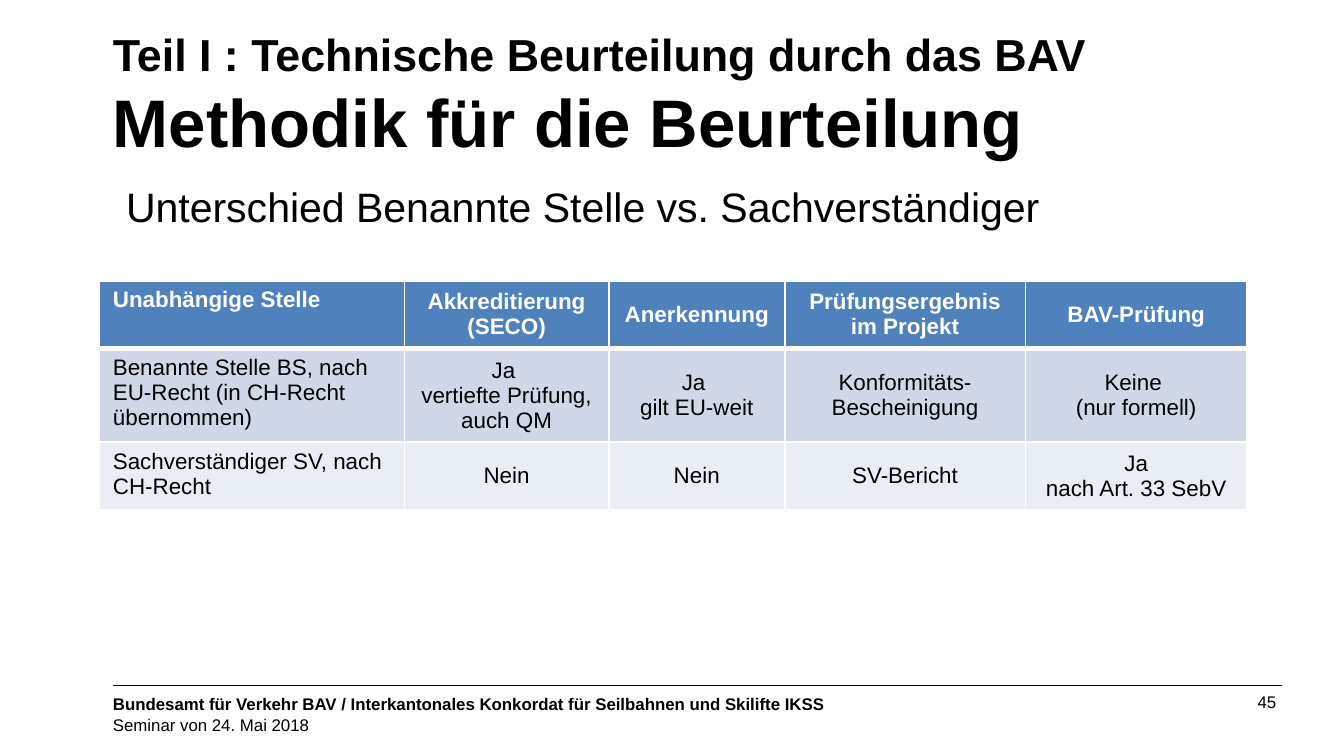
from dataclasses import dataclass

from lxml.etree import SubElement
from pptx import Presentation
from pptx.dml.color import RGBColor
from pptx.enum.shapes import MSO_CONNECTOR
from pptx.enum.text import MSO_ANCHOR, PP_ALIGN
from pptx.oxml.ns import qn
from pptx.util import Inches, Length, Pt

COLORS = {
    "text": "000000",
    "white": "FFFFFF",
    "header": "4F81BD",
    "first": "D0D8E8",
    "second": "E9EDF4",
}
FONT = "Arial"

# A 16:9 slide on a grid of square units, 1000 across
GRID_COLUMNS = 1000
SLIDE_WIDTH = Inches(10)
SLIDE_HEIGHT = Length(SLIDE_WIDTH * 9 // 16)
LEFT, RIGHT = 84, 954


@dataclass
class Area:
    column: int
    row: int
    columns: int
    rows: int

    def lengths(self) -> list:
        return [units(count) for count in (self.column, self.row, self.columns, self.rows)]


@dataclass
class TextBlock:
    text: str
    area: Area
    size: int
    bold: bool = False
    align: PP_ALIGN = PP_ALIGN.LEFT
    line_spacing: object = None
    has_margins: bool = False


@dataclass
class TableRow:
    cells: list
    rows: int
    fill: str
    color: str = "text"
    bold: bool = False
    bottom_border: int = 1


def units(count: int) -> Length:
    return Length(SLIDE_WIDTH * count // GRID_COLUMNS)


def rgb(name: str) -> RGBColor:
    return RGBColor.from_string(COLORS[name])


def format_run(run, size: int, bold: bool, color: str = "text") -> None:
    run.font.name = FONT
    run.font.size = Pt(size)
    run.font.bold = bold
    run.font.color.rgb = rgb(color)


def clear_margins(text_frame) -> None:
    text_frame.margin_left = text_frame.margin_right = 0
    text_frame.margin_top = text_frame.margin_bottom = 0


def fill_title(title, area: Area, lines: list) -> None:
    title.left, title.top, title.width, title.height = area.lengths()
    text_frame = title.text_frame
    clear_margins(text_frame)
    text_frame.word_wrap = True
    text_frame.vertical_anchor = MSO_ANCHOR.MIDDLE
    text_frame.text = "\v".join(text for text, _ in lines)
    paragraph = text_frame.paragraphs[0]
    paragraph.alignment = PP_ALIGN.LEFT
    for run, (_, size) in zip(paragraph.runs, lines):
        format_run(run, size, True)
    # The line break takes the size of the first line
    for line_break in paragraph._p.findall(qn("a:br")):
        SubElement(line_break, qn("a:rPr"), sz=str(lines[0][1] * 100))


def add_text(slide, block: TextBlock) -> None:
    text_frame = slide.shapes.add_textbox(*block.area.lengths()).text_frame
    text_frame.word_wrap = True
    if not block.has_margins:
        clear_margins(text_frame)
    text_frame.text = block.text
    paragraph = text_frame.paragraphs[0]
    paragraph.alignment = block.align
    if block.line_spacing:
        paragraph.line_spacing = block.line_spacing
    format_run(paragraph.runs[0], block.size, block.bold)


def add_borders(cell, bottom_width: int) -> None:
    properties = cell._tc.get_or_add_tcPr()
    widths = {"a:lnL": 1, "a:lnR": 1, "a:lnT": 1, "a:lnB": bottom_width}
    for position, (tag, width) in enumerate(widths.items()):
        line = SubElement(properties, qn(tag), w=str(Pt(width)))
        fill = SubElement(line, qn("a:solidFill"))
        SubElement(fill, qn("a:srgbClr"), val=COLORS["white"])
        properties.insert(position, line)


def fill_cell(cell, text: str, row: TableRow, is_label: bool) -> None:
    cell.fill.solid()
    cell.fill.fore_color.rgb = rgb(row.fill)
    cell.vertical_anchor = MSO_ANCHOR.TOP if is_label else MSO_ANCHOR.MIDDLE
    cell.text_frame.text = text
    for paragraph in cell.text_frame.paragraphs:
        paragraph.alignment = PP_ALIGN.LEFT if is_label else PP_ALIGN.CENTER
        for run in paragraph.runs:
            format_run(run, 12, row.bold, row.color)
    add_borders(cell, row.bottom_border)


def add_comparison(slide, area: Area, widths: list, rows: list) -> None:
    frame = slide.shapes.add_table(len(rows), len(widths), *area.lengths())
    table = frame.table
    for table_column, width in zip(table.columns, widths):
        table_column.width = units(width)
    for table_row, content in zip(table.rows, rows):
        table_row.height = units(content.rows)
        for index, (cell, text) in enumerate(zip(table_row.cells, content.cells)):
            fill_cell(cell, text, content, index == 0)
    # The rows grow with their text inside the frame
    frame.height = units(area.rows)


def add_rule(slide, row: int) -> None:
    rule = slide.shapes.add_connector(
        MSO_CONNECTOR.STRAIGHT, units(LEFT), units(row), units(RIGHT), units(row))
    rule.line.color.rgb = rgb("text")
    rule.line.width = Pt(0.5)
    SubElement(rule._element.spPr, qn("a:effectLst"))


TITLE_LINES = [
    ("Teil I : Technische Beurteilung durch das BAV", 24),
    ("Methodik für die Beurteilung", 36),
]
TEXT_BLOCKS = [
    TextBlock("Unterschied Benannte Stelle vs. Sachverständiger",
              Area(LEFT, 131, RIGHT - LEFT, 362), 22, line_spacing=Pt(26), has_margins=True),
    TextBlock("Bundesamt für Verkehr BAV / Interkantonales Konkordat für Seilbahnen "
              "und Skilifte IKSS", Area(LEFT, 516, 779, 15), 9, bold=True),
    TextBlock("Seminar von 24. Mai 2018", Area(LEFT, 532, 165, 15), 9),
    TextBlock("45 ", Area(705, 514, 248, 16), 9, align=PP_ALIGN.RIGHT, line_spacing=1.05),
]
COLUMN_WIDTHS = [227, 152, 131, 179, 165]
TABLE_ROWS = [
    TableRow(["Unabhängige Stelle", "Akkreditierung (SECO)", "Anerkennung",
              "Prüfungsergebnis im Projekt", "BAV-Prüfung"],
             0, "header", "white", True, 3),
    TableRow(["Benannte Stelle BS, nach EU-Recht (in CH-Recht übernommen)",
              "Ja \nvertiefte Prüfung, auch QM", "Ja \ngilt EU-weit",
              "Konformitäts- Bescheinigung", "Keine \n(nur formell)"], 41, "first"),
    TableRow(["Sachverständiger SV, nach CH-Recht", "Nein", "Nein", "SV-Bericht",
              "Ja\nnach Art. 33 SebV"], 41, "second"),
]


def main() -> None:
    presentation = Presentation()
    presentation.slide_width, presentation.slide_height = SLIDE_WIDTH, SLIDE_HEIGHT
    slide = presentation.slides.add_slide(presentation.slide_layouts[5])

    # Title, subtitle and footer
    fill_title(slide.shapes.title, Area(LEFT, 19, RIGHT - LEFT, 102), TITLE_LINES)
    for block in TEXT_BLOCKS:
        add_text(slide, block)
    add_rule(slide, 510)

    # Comparison of the independent bodies
    add_comparison(slide, Area(74, 209, sum(COLUMN_WIDTHS), 170), COLUMN_WIDTHS, TABLE_ROWS)

    presentation.save("out.pptx")


if __name__ == "__main__":
    main()
